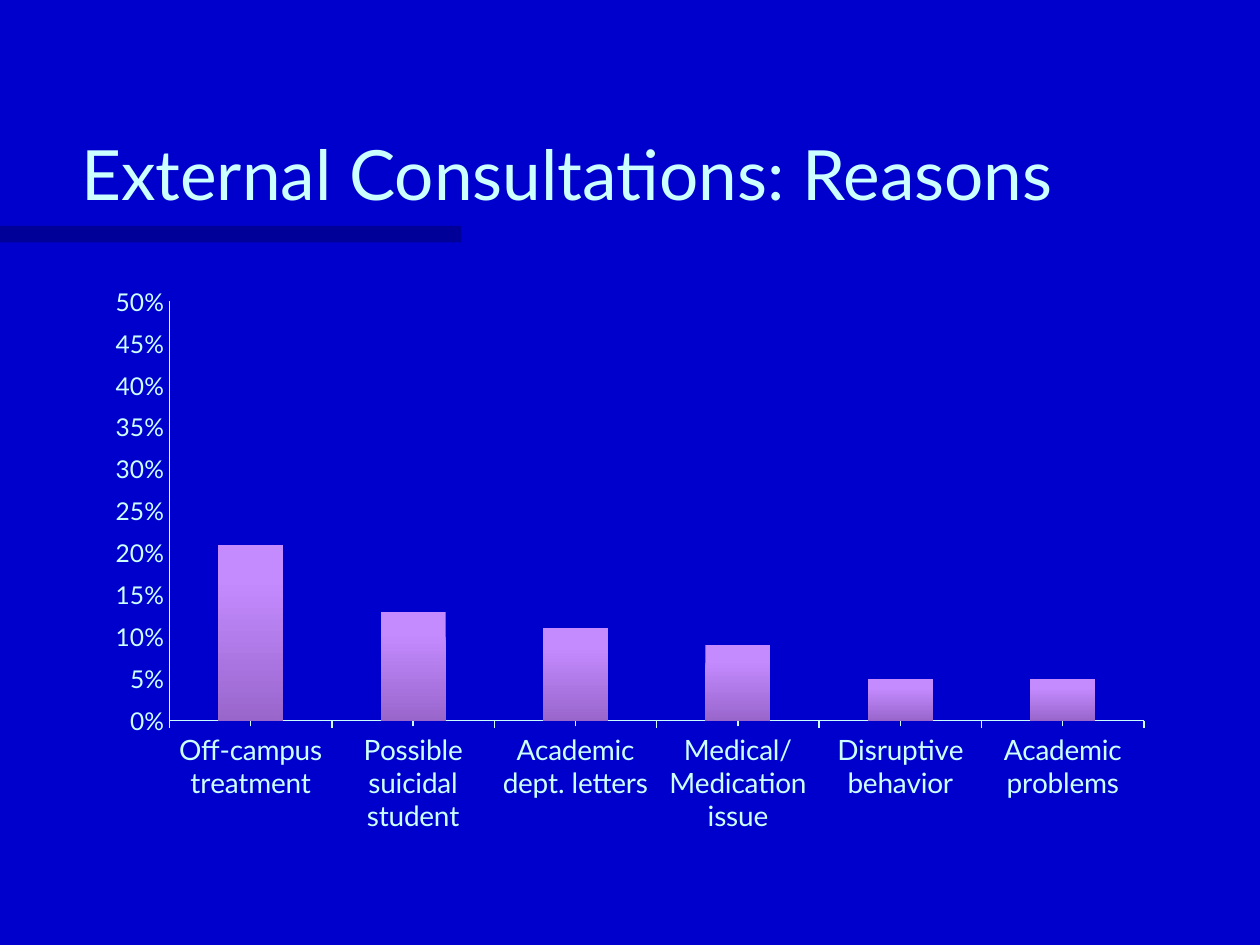
from dataclasses import dataclass

import pptx
import pptx.chart.data
import pptx.dml.color
import pptx.enum.chart
import pptx.enum.shapes
import pptx.enum.text
import pptx.oxml
import pptx.util
from pptx.util import Pt

FONT = "Lato"
PALE = "CCFFFF"
TICK = pptx.enum.chart.XL_TICK_MARK


@dataclass
class Reason:
    label: str
    share: float


REASONS = [
    Reason("Off-campus treatment", 0.21),
    Reason("Possible suicidal student", 0.13),
    Reason("Academic dept. letters", 0.11),
    Reason("Medical/Medication issue", 0.09),
    Reason("Disruptive behavior", 0.05),
    Reason("Academic problems", 0.05),
]


def color(value: str) -> pptx.dml.color.RGBColor:
    return pptx.dml.color.RGBColor.from_string(value)


def style_font(font, size: float, value: str) -> None:
    font.name = FONT
    font.size = Pt(size)
    font.bold = False
    font.color.rgb = color(value)


def style_axis(axis, size: float, tick_mark) -> None:
    axis.has_major_gridlines = False
    axis.major_tick_mark = axis.minor_tick_mark = tick_mark
    axis.format.line.color.rgb = color(PALE)
    axis.format.line.width = Pt(0.75)
    style_font(axis.tick_labels.font, size, PALE)


def add_accent_bar(slide) -> None:
    bar = slide.shapes.add_shape(
        pptx.enum.shapes.MSO_SHAPE.RECTANGLE, Pt(0), Pt(129), Pt(263.5), Pt(9.5))
    bar.shadow.inherit = False
    bar.fill.solid()
    bar.fill.fore_color.rgb = color("000066")
    bar.line.fill.background()
    # Half transparency
    fill_color = bar._element.spPr.find(".//" + pptx.oxml.ns.qn("a:srgbClr"))
    fill_color.append(pptx.oxml.parse_xml(
        f'<a:alpha {pptx.oxml.ns.nsdecls("a")} val="50000"/>'))


def set_title(slide, text: str) -> None:
    title = slide.shapes.title
    title.left, title.top, title.width, title.height = Pt(18), Pt(36), Pt(612), Pt(90)
    frame = title.text_frame
    frame.text = text
    frame.word_wrap = True
    frame.auto_size = pptx.enum.text.MSO_AUTO_SIZE.NONE
    frame.vertical_anchor = pptx.enum.text.MSO_ANCHOR.BOTTOM
    paragraph = frame.paragraphs[0]
    paragraph.alignment = pptx.enum.text.PP_ALIGN.CENTER
    style_font(paragraph.font, 39.6, PALE)


def set_plot_area(chart, x: float, y: float, width: float, height: float) -> None:
    plot_area = chart._chartSpace.chart.plotArea
    for layout in plot_area.findall(pptx.oxml.ns.qn("c:layout")):
        plot_area.remove(layout)
    plot_area.insert(0, pptx.oxml.parse_xml(
        f'<c:layout {pptx.oxml.ns.nsdecls("c")}><c:manualLayout>'
        '<c:layoutTarget val="inner"/><c:xMode val="edge"/><c:yMode val="edge"/>'
        f'<c:x val="{x}"/><c:y val="{y}"/><c:w val="{width}"/><c:h val="{height}"/>'
        '</c:manualLayout></c:layout>'))


def add_reasons_chart(slide, reasons: list[Reason]) -> None:
    data = pptx.chart.data.CategoryChartData(number_format="0%")
    data.categories = [reason.label for reason in reasons]
    data.add_series("Series 1", [reason.share for reason in reasons])
    chart = slide.shapes.add_chart(
        pptx.enum.chart.XL_CHART_TYPE.COLUMN_CLUSTERED,
        Pt(54), Pt(156), Pt(612), Pt(324), data).chart
    chart.has_title = False
    chart.has_legend = False
    style_font(chart.font, 18, "CCECFF")
    set_plot_area(chart, 0.07, 0.05, 0.91, 0.74)

    # Axes
    style_axis(chart.category_axis, 16, TICK.OUTSIDE)
    style_axis(chart.value_axis, 14, TICK.NONE)
    chart.value_axis.minimum_scale = 0
    chart.value_axis.maximum_scale = 0.5
    chart.value_axis.major_unit = 0.05
    chart.value_axis.tick_labels.number_format = "0%"
    chart.value_axis.tick_labels.number_format_is_linked = False

    # Columns shade from light at the top to dark at the base
    plot = chart.plots[0]
    plot.gap_width = 150
    plot.vary_by_categories = False
    fill = plot.series[0].format.fill
    fill.gradient()
    fill.gradient_angle = 270
    for stop, position, value in zip(fill.gradient_stops, (0.2, 1), ("C48BFF", "9966CC")):
        stop.position = position
        stop.color.rgb = color(value)


def main() -> None:
    presentation = pptx.Presentation()
    presentation.slide_width, presentation.slide_height = Pt(720), Pt(540)
    slide = presentation.slides.add_slide(presentation.slide_layouts[5])
    slide.background.fill.solid()
    slide.background.fill.fore_color.rgb = color("0000CC")

    add_accent_bar(slide)
    set_title(slide, "External Consultations: Reasons")
    add_reasons_chart(slide, REASONS)
    presentation.save("out.pptx")


if __name__ == "__main__":
    main()
